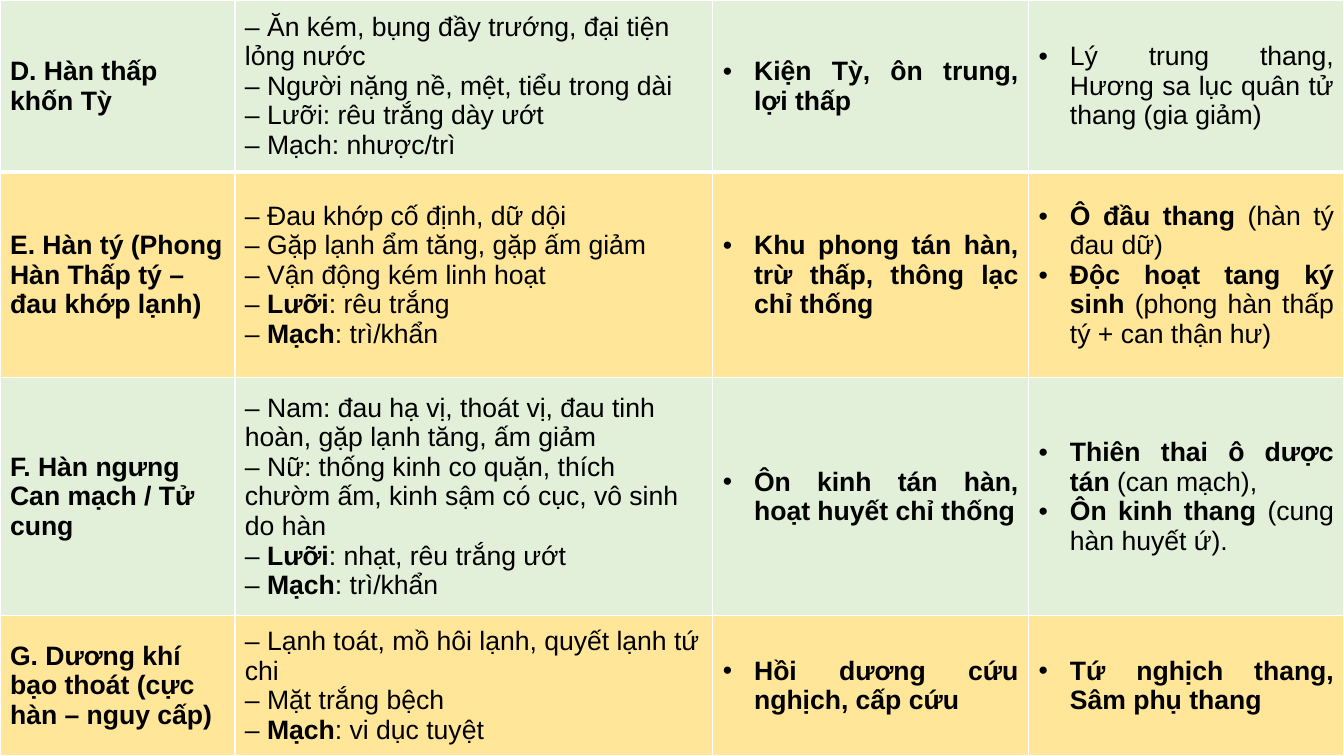
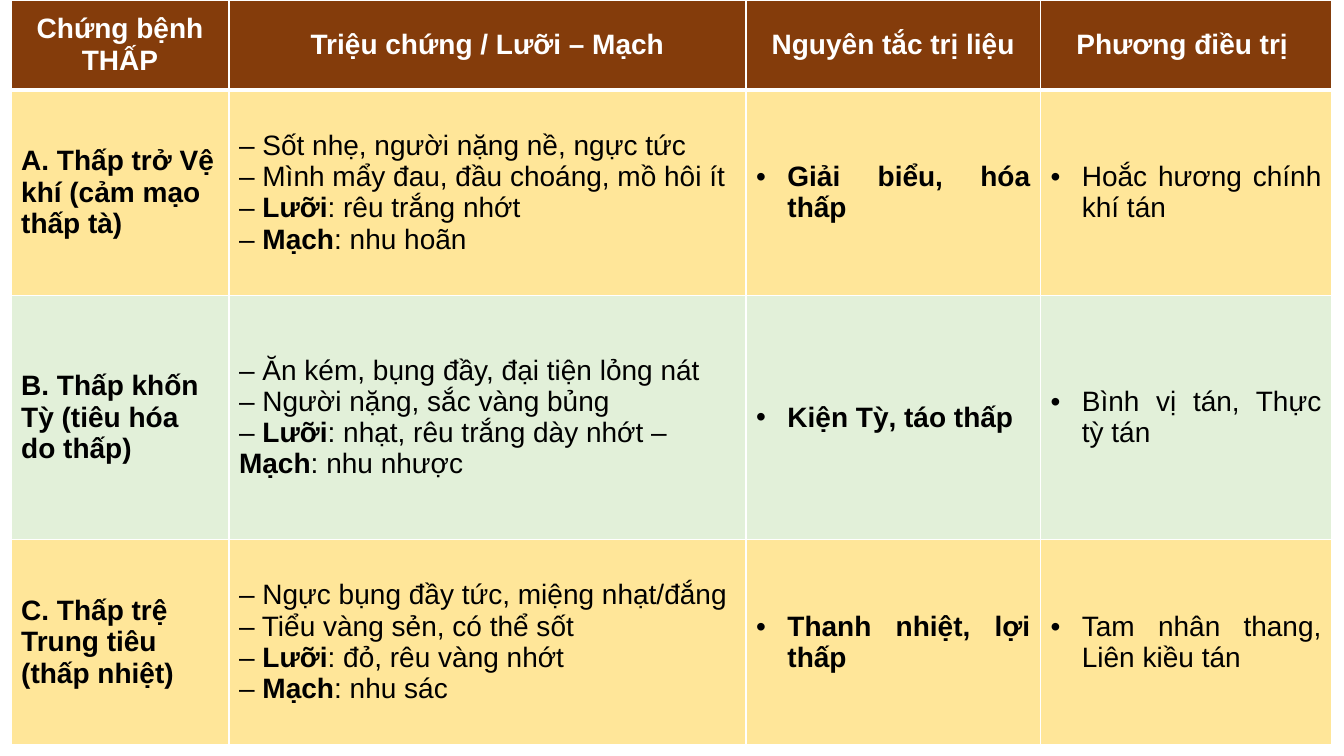
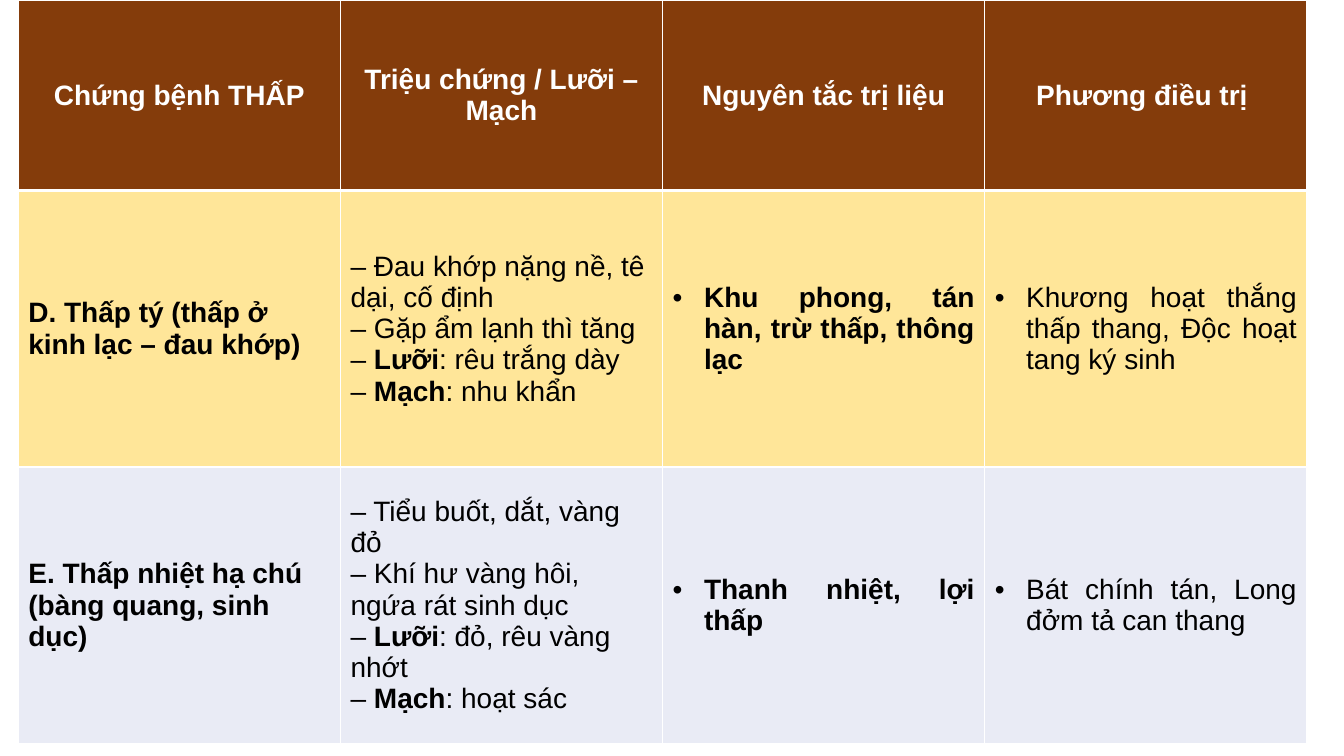
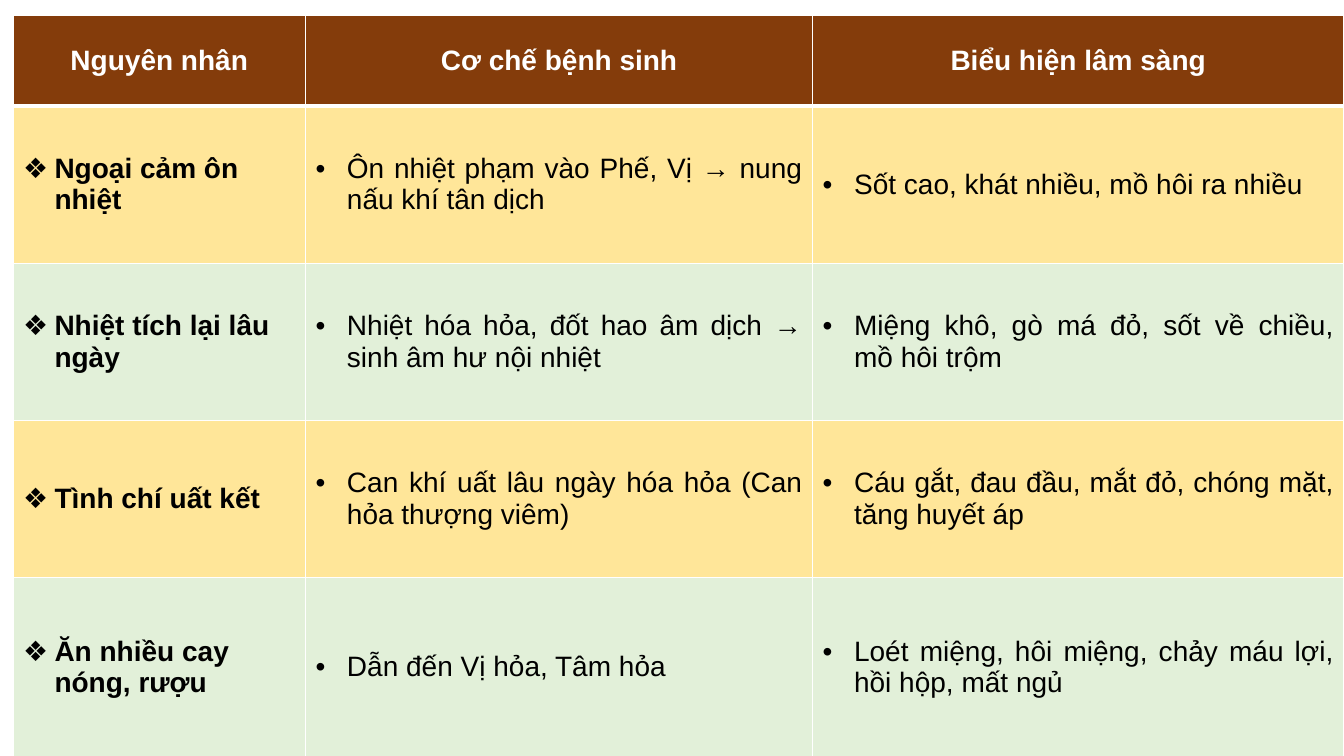
from pptx import Presentation
from pptx.dml.color import RGBColor
from pptx.enum.text import MSO_ANCHOR, PP_ALIGN
from pptx.oxml.ns import qn
from pptx.util import Cm, Pt
from lxml.etree import SubElement

HUES = {"head": "843C0B", "gold": "FFE699", "green": "E2F0D9",
        "lilac": "E9EBF5", "white": "FFFFFF", "black": "000000"}

# Column styles: alignment and bullet
STYLES = {"head": (PP_ALIGN.CENTER, None), "plain": (PP_ALIGN.LEFT, None),
          "dot": (PP_ALIGN.JUSTIFY, "•"), "gem": (PP_ALIGN.LEFT, "❖")}
FOUR = ["plain", "plain", "dot", "dot"]
DAMP = ["*Chứng bệnh THẤP*", "*Triệu chứng / Lưỡi – Mạch*",
        "*Nguyên tắc trị liệu*", "*Phương điều trị *"]

# One table per slide, in cm; a line is a paragraph, asterisks enclose bold
TABLES = [
    {"at": (0, 0), "size": 19, "kinds": FOUR,
     "cols": [5.92, 12.04, 7.96, 7.95], "rows": [4.34, 5.18, 5.99, 3.53],
     "fills": ["green", "gold", "green", "gold"],
     "cells": [
         ["*D. Hàn thấp khốn Tỳ*",
          "– Ăn kém, bụng đầy trướng, đại tiện lỏng nước\n"
          "– Người nặng nề, mệt, tiểu trong dài\n"
          "– Lưỡi: rêu trắng dày ướt\n– Mạch: nhược/trì",
          "*Kiện Tỳ, ôn trung, lợi thấp*",
          "Lý trung thang, Hương sa lục quân tử thang (gia giảm)"],
         ["*E. Hàn tý (Phong Hàn Thấp tý – đau khớp lạnh)*",
          "– Đau khớp cố định, dữ dội\n– Gặp lạnh ẩm tăng, gặp ấm giảm\n"
          "– Vận động kém linh hoạt\n"
          "– *Lưỡi*: rêu trắng\n– *Mạch*: trì/khẩn",
          "*Khu phong tán hàn, trừ thấp, thông lạc chỉ thống*",
          "*Ô đầu thang *(hàn tý đau dữ)\n"
          "*Độc hoạt tang ký sinh *(phong hàn thấp tý + can thận hư)"],
         ["*F. Hàn ngưng Can mạch / Tử cung*",
          "– Nam: đau hạ vị, thoát vị, đau tinh hoàn, gặp lạnh tăng, ấm giảm\n"
          "– Nữ: thống kinh co quặn, thích chườm ấm, kinh sậm có cục, "
          "vô sinh do hàn\n"
          "– *Lưỡi*: nhạt, rêu trắng ướt\n– *Mạch*: trì/khẩn",
          "*Ôn kinh tán hàn, hoạt huyết chỉ thống*",
          "*Thiên thai ô dược tán *(can mạch), \n"
          "*Ôn kinh thang *(cung hàn huyết ứ)."],
         ["*G. Dương khí bạo thoát (cực hàn – nguy cấp)*",
          "– Lạnh toát, mồ hôi lạnh, quyết lạnh tứ chi\n– Mặt trắng bệch\n"
          "– *Mạch*: vi dục tuyệt",
          "*Hồi dương cứu nghịch, cấp cứu*",
          "*Tứ nghịch thang, Sâm phụ thang*"]]},
    {"at": (0.28, 0), "size": 20, "kinds": FOUR,
     "cols": [5.49, 13.03, 7.42, 7.34], "rows": [2.26, 5.18, 6.15, 5.18],
     "fills": ["head", "gold", "green", "gold"],
     "cells": [
         DAMP,
         ["*A. Thấp trở Vệ khí (cảm mạo thấp tà)*",
          "– Sốt nhẹ, người nặng nề, ngực tức\n"
          "– Mình mẩy đau, đầu choáng, mồ hôi ít\n"
          "– *Lưỡi*: rêu trắng nhớt\n– *Mạch*: nhu hoãn",
          "*Giải biểu, hóa thấp*", "Hoắc hương chính khí tán"],
         ["*B. Thấp khốn Tỳ (tiêu hóa do thấp)*",
          "– Ăn kém, bụng đầy, đại tiện lỏng nát\n"
          "– Người nặng, sắc vàng bủng\n"
          "– *Lưỡi*: nhạt, rêu trắng dày nhớt – *Mạch*: nhu nhược",
          "*Kiện Tỳ, táo thấp*", "Bình vị tán, Thực tỳ tán"],
         ["*C. Thấp trệ Trung tiêu (thấp nhiệt)*",
          "– Ngực bụng đầy tức, miệng nhạt/đắng\n"
          "– Tiểu vàng sẻn, có thể sốt\n"
          "– *Lưỡi*: đỏ, rêu vàng nhớt\n– *Mạch*: nhu sác",
          "*Thanh nhiệt, lợi thấp*", "Tam nhân thang, Liên kiều tán"]]},
    {"at": (0.46, 0), "size": 20, "kinds": FOUR,
     "cols": [8.12] * 4, "rows": [4.8, 6.97, 6.97],
     "fills": ["head", "gold", "lilac"],
     "cells": [
         DAMP,
         ["*D. Thấp tý (thấp ở kinh lạc – đau khớp)*",
          "– Đau khớp nặng nề, tê dại, cố định\n– Gặp ẩm lạnh thì tăng\n"
          "– *Lưỡi*: rêu trắng dày\n– *Mạch*: nhu khẩn",
          "*Khu phong, tán hàn, trừ thấp, thông lạc*",
          "Khương hoạt thắng thấp thang, Độc hoạt tang ký sinh"],
         ["*E. Thấp nhiệt hạ chú (bàng quang, sinh dục)*",
          "– Tiểu buốt, dắt, vàng đỏ\n– Khí hư vàng hôi, ngứa rát sinh dục\n"
          "– *Lưỡi*: đỏ, rêu vàng nhớt\n– *Mạch*: hoạt sác",
          "*Thanh nhiệt, lợi thấp*", "Bát chính tán, Long đởm tả can thang"]]},
    {"at": (0.33, 0.38), "size": 20, "kinds": ["gem", "dot", "dot"],
     "cols": [7.37, 12.78, 13.39], "rows": [2.29, 3.96, 3.96, 3.96, 4.52],
     "fills": ["head", "gold", "green", "gold", "green"],
     "cells": [
         ["*Nguyên nhân*", "*Cơ chế bệnh sinh*", "*Biểu hiện lâm sàng*"],
         ["*Ngoại cảm ôn nhiệt*",
          "Ôn nhiệt phạm vào Phế, Vị → nung nấu khí tân dịch",
          "Sốt cao, khát nhiều, mồ hôi ra nhiều"],
         ["*Nhiệt tích lại lâu ngày*",
          "Nhiệt hóa hỏa, đốt hao âm dịch → sinh âm hư nội nhiệt",
          "Miệng khô, gò má đỏ, sốt về chiều, mồ hôi trộm"],
         ["*Tình chí uất kết*",
          "Can khí uất lâu ngày hóa hỏa (Can hỏa thượng viêm)",
          "Cáu gắt, đau đầu, mắt đỏ, chóng mặt, tăng huyết áp"],
         ["*Ăn nhiều cay nóng, rượu*", "Dẫn đến Vị hỏa, Tâm hỏa",
          "Loét miệng, hôi miệng, chảy máu lợi, hồi hộp, mất ngủ"]]},
]


def write(cell, text, kind, size):
    """Fill a cell with styled paragraphs."""
    align, mark = STYLES[kind]
    hue = HUES["white" if kind == "head" else "black"]
    for i, line in enumerate(text.split("\n")):
        frame = cell.text_frame
        para = frame.add_paragraph() if i else frame.paragraphs[0]
        para.alignment = align
        if mark:
            props = para._p.get_or_add_pPr()
            props.set("marL", str(Cm(0.79)))
            props.set("indent", str(-Cm(0.79)))
            SubElement(props, qn("a:buFont"), typeface="Arial")
            SubElement(props, qn("a:buChar"), char=mark)
        for j, part in enumerate(line.split("*")):
            if part:
                run = para.add_run()
                run.text = part
                look = {"name": "Arial", "size": Pt(size), "bold": j % 2 == 1}
                for key, value in look.items():
                    setattr(run.font, key, value)
                run.font.color.rgb = RGBColor.from_string(hue)


def edge(cell, row):
    """Draw white borders, thick below the first row."""
    props = cell._tc.get_or_add_tcPr()
    widths = {"L": 1, "R": 1, "T": 3 if row == 1 else 1,
              "B": 3 if row == 0 else 1}
    for side, width in widths.items():
        line = SubElement(props, qn("a:ln" + side), w=str(Pt(width)))
        fill = SubElement(line, qn("a:solidFill"))
        SubElement(fill, qn("a:srgbClr"), val=HUES["white"])


deck = Presentation()
deck.slide_width, deck.slide_height = Cm(33.87), Cm(19.05)

for data in TABLES:
    slide = deck.slides.add_slide(deck.slide_layouts[6])
    cols, rows = data["cols"], data["rows"]
    left, top = data["at"]
    table = slide.shapes.add_table(
        len(rows), len(cols), Cm(left), Cm(top),
        Cm(sum(cols)), Cm(sum(rows))).table

    # Grid sizes
    for col, width in zip(table.columns, cols):
        col.width = Cm(width)
    for row, height in zip(table.rows, rows):
        row.height = Cm(height)

    # Cells
    for r, (tone, texts) in enumerate(zip(data["fills"], data["cells"])):
        for c, (kind, text) in enumerate(zip(data["kinds"], texts)):
            cell = table.cell(r, c)
            edge(cell, r)
            cell.fill.solid()
            cell.fill.fore_color.rgb = RGBColor.from_string(HUES[tone])
            cell.vertical_anchor = MSO_ANCHOR.MIDDLE
            write(cell, text, "head" if tone == "head" else kind, data["size"])

deck.save("out.pptx")
